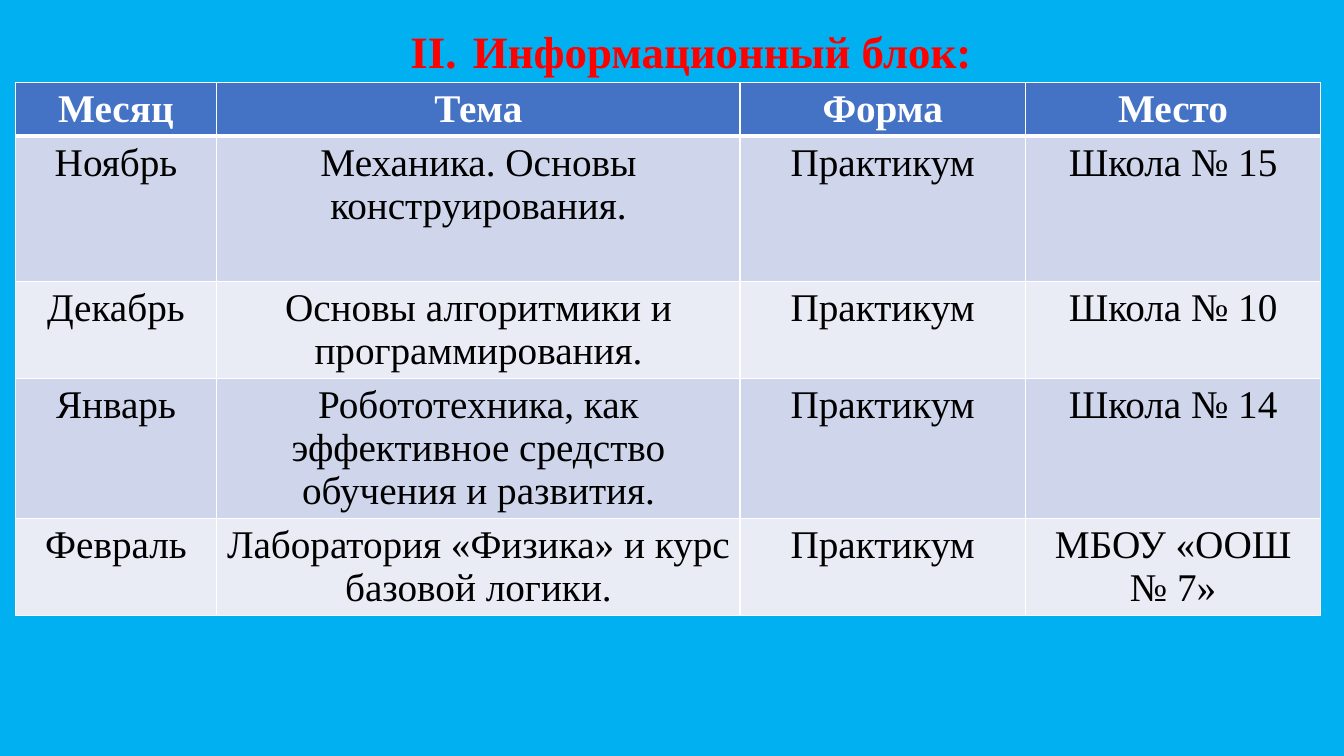
from lxml import etree
from pptx import Presentation, util as u
from pptx.dml.color import RGBColor
from pptx.enum import text
from pptx.oxml import ns

FONT = "Times New Roman"
GRID_COLUMNS, GRID_ROWS = 13.33, 7.5
HEADING_BOX = (0.38, 0.25, 12.95, 6.06)
TABLE_BOX = (0.15, 0.82, 12.95, 5.27)
COLUMN_WEIGHTS = (2, 5.19, 2.83, 2.93)
ROW_WEIGHTS = (0.52, 1.44, 0.96, 1.39, 0.96)
SKY, RED, WHITE, BLACK = "00B0F0", "FF0000", "FFFFFF", "000000"
HEADER_FILL, BAND_FILLS = "4472C4", ("CFD5EA", "E9EBF5")
SCHEDULE = (
    ("Месяц", "Тема", "Форма", "Место"),
    ("Ноябрь", "Механика. Основы конструирования.", "Практикум", "Школа № 15"),
    ("Декабрь", "Основы алгоритмики и программирования.", "Практикум", "Школа № 10"),
    ("Январь", "Робототехника, как эффективное средство обучения и развития.",
     "Практикум", "Школа № 14"),
    ("Февраль", "Лаборатория «Физика» и курс базовой логики.", "Практикум", "МБОУ «ООШ № 7»"),
)


def paint(target, color):
    target.solid()
    target.fore_color.rgb = RGBColor.from_string(color)


def add_element(parent, tag, **attributes):
    element = etree.SubElement(parent, ns.qn(tag))
    for name, value in attributes.items():
        element.set(name, str(value))
    return element


def write(frame, words, size=28, color=BLACK, bold=False):
    para = frame.paragraphs[0]
    para.alignment = text.PP_ALIGN.CENTER
    span = para.add_run()
    span.text = words
    span.font.name = FONT
    span.font.size = u.Pt(size)
    span.font.bold = bold
    paint(span.font.fill, color)
    return para


def place(deck, box):
    column = deck.slide_width / GRID_COLUMNS
    row = deck.slide_height / GRID_ROWS
    left, top, width, height = box
    return [round(v) for v in (left * column, top * row, width * column, height * row)]


def number_roman(para, start, indent):
    props = para._p.get_or_add_pPr()
    props.set("marL", str(indent))
    props.set("indent", str(-indent))
    add_element(props, "a:buFont", typeface=FONT)
    add_element(props, "a:buAutoNum", type="romanUcPeriod", startAt=start)


def build_heading(page, box):
    body = page.placeholders[1]
    body.left, body.top, body.width, body.height = box
    body.text_frame.auto_size = text.MSO_AUTO_SIZE.NONE
    para = write(body.text_frame, "Информационный блок:", size=32, color=RED, bold=True)
    para.line_spacing = 0.9
    para.space_before = u.Pt(10)
    number_roman(para, start=2, indent=u.Inches(0.62))


def border_cell(cell, bottom):
    props = cell._tc.get_or_add_tcPr()
    fill = props[0]
    for side, points in (("L", 1), ("R", 1), ("T", 1), ("B", bottom)):
        line = add_element(props, f"a:ln{side}", w=u.Pt(points))
        add_element(add_element(line, "a:solidFill"), "a:srgbClr", val=WHITE)
    props.append(fill)


def build_schedule(page, box):
    left, top, width, height = box
    table = page.shapes.add_table(len(SCHEDULE), len(SCHEDULE[0]), *box).table
    for column, weight in zip(table.columns, COLUMN_WEIGHTS):
        column.width = round(width * weight / sum(COLUMN_WEIGHTS))
    for row, weight in zip(table.rows, ROW_WEIGHTS):
        row.height = round(height * weight / sum(ROW_WEIGHTS))
    for r, entries in enumerate(SCHEDULE):
        header = r == 0
        for c, words in enumerate(entries):
            cell = table.cell(r, c)
            write(cell.text_frame, words, color=WHITE if header else BLACK, bold=header)
            paint(cell.fill, HEADER_FILL if header else BAND_FILLS[(r - 1) % 2])
            border_cell(cell, bottom=3 if header else 1)
    for c in range(len(SCHEDULE[0])):
        props = table.cell(1, c)._tc.get_or_add_tcPr()
        props.find(ns.qn("a:lnT")).set("w", str(u.Pt(3)))


def main():
    deck = Presentation()
    deck.slide_width = u.Inches(GRID_COLUMNS)
    deck.slide_height = u.Inches(GRID_ROWS)
    page = deck.slides.add_slide(deck.slide_layouts[1])
    paint(page.background.fill, SKY)
    title = page.shapes.title.element
    title.getparent().remove(title)
    build_heading(page, place(deck, HEADING_BOX))
    build_schedule(page, place(deck, TABLE_BOX))
    deck.save("out.pptx")


if __name__ == "__main__":
    main()
